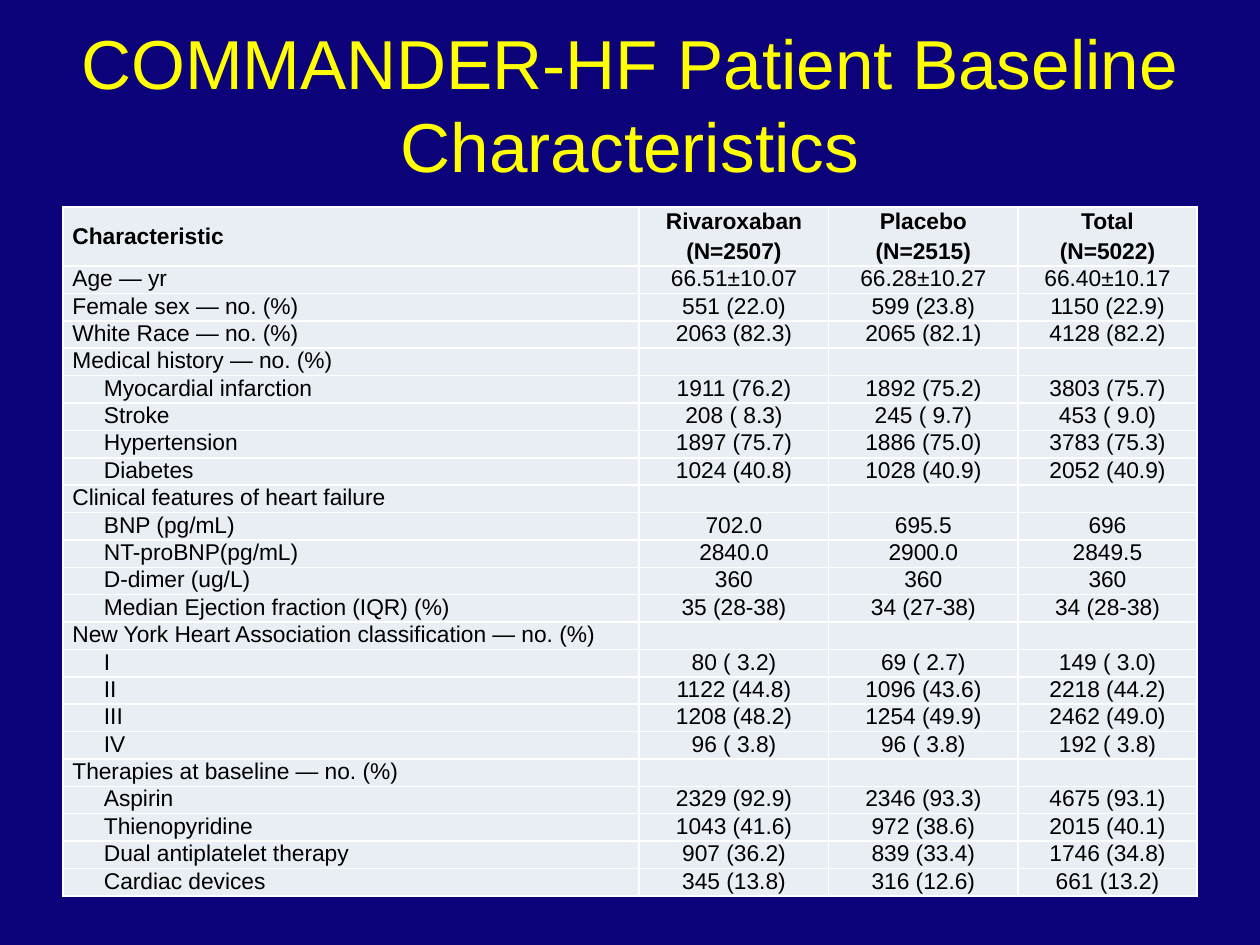
from lxml import etree
from pptx import Presentation
from pptx.dml.color import RGBColor
from pptx.enum.text import MSO_ANCHOR, PP_ALIGN
from pptx.oxml.ns import qn
from pptx.util import Pt

LEFT, CENTER = PP_ALIGN.LEFT, PP_ALIGN.CENTER
TOP, MIDDLE = MSO_ANCHOR.TOP, MSO_ANCHOR.MIDDLE
NAVY = RGBColor(0x0C, 0x03, 0x7A)
YELLOW = RGBColor(0xFF, 0xFF, 0x00)
PALE = RGBColor(0xE9, 0xED, 0xF4)
BLACK = RGBColor(0x00, 0x00, 0x00)
WHITE = RGBColor(0xFF, 0xFF, 0xFF)
FONT = "Arial"

TITLE = "COMMANDER-HF Patient Baseline Characteristics"
HEADER = ["Characteristic", "Rivaroxaban\n(N=2507)", "Placebo\n(N=2515)", "Total\n(N=5022)"]
# Each group: heading (None for ungrouped rows) and its rows
GROUPS = [
    (None, [
        ("Age — yr", "66.51±10.07", "66.28±10.27", "66.40±10.17"),
        ("Female sex — no. (%)", "551 (22.0)", "599 (23.8)", "1150 (22.9)"),
        ("White Race — no. (%)", "2063 (82.3)", "2065 (82.1)", "4128 (82.2)"),
    ]),
    ("Medical history — no. (%)", [
        ("Myocardial infarction", "1911 (76.2)", "1892 (75.2)", "3803 (75.7)"),
        ("Stroke", "208 ( 8.3)", "245 ( 9.7)", "453 ( 9.0)"),
        ("Hypertension", "1897 (75.7)", "1886 (75.0)", "3783 (75.3)"),
        ("Diabetes", "1024 (40.8)", "1028 (40.9)", "2052 (40.9)"),
    ]),
    ("Clinical features of heart failure", [
        ("BNP (pg/mL)", "702.0", "695.5", "696"),
        ("NT-proBNP(pg/mL)", "2840.0", "2900.0", "2849.5"),
        ("D-dimer (ug/L)", "360", "360", "360"),
        ("Median Ejection fraction (IQR) (%)", "35 (28-38)", "34 (27-38)", "34 (28-38)"),
    ]),
    ("New York Heart Association classification — no. (%)", [
        ("I", "80 ( 3.2)", "69 ( 2.7)", "149 ( 3.0)"),
        ("II", "1122 (44.8)", "1096 (43.6)", "2218 (44.2)"),
        ("III", "1208 (48.2)", "1254 (49.9)", "2462 (49.0)"),
        ("IV", "96 ( 3.8)", "96 ( 3.8)", "192 ( 3.8)"),
    ]),
    ("Therapies at baseline — no. (%)", [
        ("Aspirin", "2329 (92.9)", "2346 (93.3)", "4675 (93.1)"),
        ("Thienopyridine", "1043 (41.6)", "972 (38.6)", "2015 (40.1)"),
        ("Dual antiplatelet therapy", "907 (36.2)", "839 (33.4)", "1746 (34.8)"),
        ("Cardiac devices", "345 (13.8)", "316 (12.6)", "661 (13.2)"),
    ]),
]

SLIDE_W, SLIDE_H = 720, 540
MARGIN, CONTENT_W = 36, 648
TABLE_TOP = 118.2
COLUMN_WIDTHS = [329.3, 108.2, 108.2, 102.3]
HEADER_H, ROW_H = 32.8, 15.53
CELL_PAD, INDENT = 5.4, 18
TITLE_SIZE, TABLE_SIZE = 39.6, 13


def add_run(paragraph, text, size, color, bold=False):
    run = paragraph.add_run()
    run.text = text
    run.font.name = FONT
    run.font.size = Pt(size)
    run.font.bold = bold
    run.font.color.rgb = color


def add_borders(cell):
    properties = cell._tc.get_or_add_tcPr()
    for index, side in enumerate(("lnL", "lnR", "lnT", "lnB")):
        line = etree.Element(qn(f"a:{side}"), w=str(Pt(1)))
        fill = etree.SubElement(line, qn("a:solidFill"))
        etree.SubElement(fill, qn("a:srgbClr"), val=str(WHITE))
        properties.insert(index, line)


def fill_cell(cell, text, align, anchor, bold, indent):
    cell.fill.solid()
    cell.fill.fore_color.rgb = PALE
    add_borders(cell)
    cell.vertical_anchor = anchor
    cell.margin_left, cell.margin_right = Pt(CELL_PAD + indent), Pt(CELL_PAD)
    cell.margin_top = cell.margin_bottom = 0
    frame = cell.text_frame
    for number, line in enumerate(text.split("\n")):
        paragraph = frame.add_paragraph() if number else frame.paragraphs[0]
        paragraph.alignment = align
        # The first line stays tight so that the row keeps its height
        paragraph.line_spacing = 1.07 if number else 1.0
        paragraph.space_before = Pt(1.5 if number else 0.3)
        paragraph.space_after = Pt(0)
        if line:
            add_run(paragraph, line, TABLE_SIZE, BLACK, bold)
        else:  # keeps an empty cell as low as its row
            etree.SubElement(paragraph._p, qn("a:endParaRPr"), sz=str(TABLE_SIZE * 100))


prs = Presentation()
prs.slide_width, prs.slide_height = Pt(SLIDE_W), Pt(SLIDE_H)
slide = prs.slides.add_slide(prs.slide_layouts[6])
slide.background.fill.solid()
slide.background.fill.fore_color.rgb = NAVY

# Title
title = slide.shapes.add_textbox(Pt(MARGIN), Pt(14), Pt(CONTENT_W), Pt(90)).text_frame
title.word_wrap = True
title.vertical_anchor = MIDDLE
title.paragraphs[0].alignment = CENTER
add_run(title.paragraphs[0], TITLE, TITLE_SIZE, YELLOW)

# Rows in reading order, each with the indent of its first cell
rows = [(HEADER, 0)]
for heading, members in GROUPS:
    if heading:
        rows.append(((heading, "", "", ""), 0))
    rows += [(member, INDENT if heading else 0) for member in members]

# Baseline table
table_height = HEADER_H + ROW_H * (len(rows) - 1)
table = slide.shapes.add_table(len(rows), len(HEADER), Pt(MARGIN), Pt(TABLE_TOP),
                               Pt(CONTENT_W), Pt(table_height)).table
for column, width in zip(table.columns, COLUMN_WIDTHS):
    column.width = Pt(width)
for r, (texts, indent) in enumerate(rows):
    is_header = r == 0
    table.rows[r].height = Pt(HEADER_H if is_header else ROW_H)
    for c, text in enumerate(texts):
        fill_cell(table.cell(r, c), text, CENTER if c else LEFT,
                  MIDDLE if is_header else TOP, is_header, 0 if c else indent)

prs.save("out.pptx")
